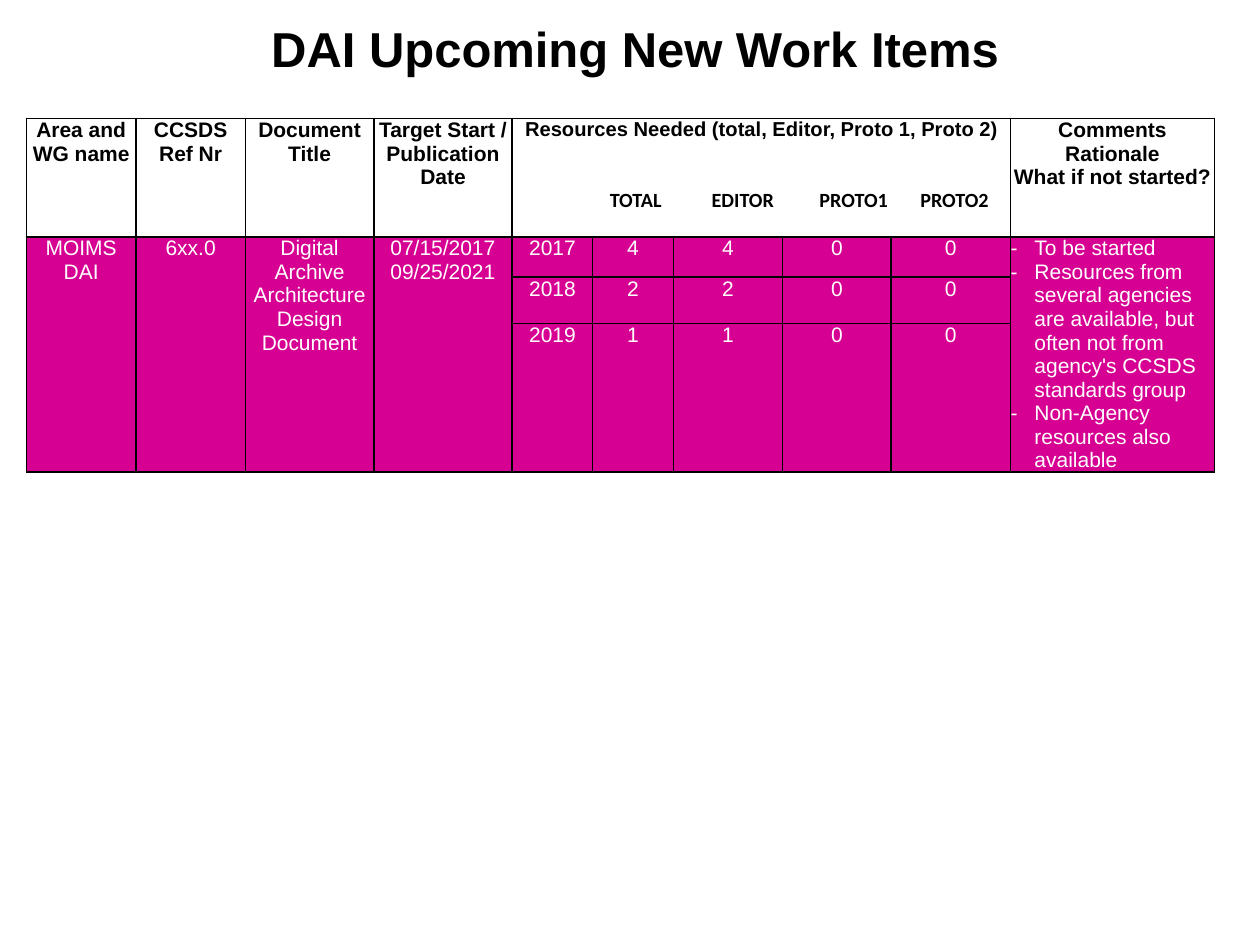
from pptx import Presentation
from pptx.dml.color import RGBColor
from pptx.enum.text import MSO_ANCHOR, PP_ALIGN
from pptx.oxml.ns import qn
from pptx.util import Emu, Inches, Pt
from lxml import etree

LEFT, MID = PP_ALIGN.LEFT, PP_ALIGN.CENTER
TOP = MSO_ANCHOR.TOP
HEX = {"ink": "000000", "pink": "D60093", "pale": "FFFFFF"}

# Table grid, in hundredths of an inch; the last row grows with its text
COLS = [87, 87, 102, 110, 64, 64, 87, 86, 95, 162]
ROWS = [94, 32, 37, 30]
YEAR, NOTE = 4, 9  # first resource column, comments column

HEADS = {
    0: "Area and WG name",
    1: "CCSDS Ref Nr",
    2: "Document Title",
    3: "Target Start / Publication Date",
    NOTE: "Comments\nRationale\nWhat if not started?",
}
ITEM = ["MOIMS DAI", "6xx.0", "Digital Archive Architecture Design Document",
        "07/15/2017\n09/25/2021"]
NEEDS = [(2017, 4, 4, 0, 0), (2018, 2, 2, 0, 0), (2019, 1, 1, 0, 0)]
NOTES = [
    "To be started",
    "Resources from several agencies are available, but often not from "
    "agency's CCSDS standards group",
    "Non-Agency resources also available",
]
# Resource labels and their tab stops in inches
TABS = {"TOTAL": 0.98, "EDITOR": 1.83, "PROTO1": 2.71, "PROTO2": 3.51}


def color(name):
    return RGBColor.from_string(HEX[name])


def style(para, text, size=12, ink="ink", bold=False, align=MID, face="Arial"):
    para.text = text
    para.alignment = align
    font = para.font
    font.name, font.size, font.bold = face, Pt(size), bold
    font.color.rgb = color(ink)


def indent(para, left, first=0):
    props = para._p.get_or_add_pPr()
    props.set("marL", str(Inches(left)))
    props.set("indent", str(Inches(first)))
    return props


def dress(cell, fill):
    """Set margins, fill and the four borders of a cell."""
    cell.margin_left = cell.margin_right = 0
    cell.margin_top = cell.margin_bottom = 0
    props = cell._tc.get_or_add_tcPr()
    for side in ("lnL", "lnR", "lnT", "lnB"):
        line = etree.SubElement(props, qn("a:" + side), w=str(Pt(1)))
        solid = etree.SubElement(line, qn("a:solidFill"))
        etree.SubElement(solid, qn("a:srgbClr"), val=HEX["ink"])
    if fill:
        cell.fill.solid()
        cell.fill.fore_color.rgb = color(fill)
    else:
        cell.fill.background()


def title(slide, box):
    left, top, width, high = box
    path = slide.shapes.build_freeform(0, 0)
    path.add_line_segments([(width, 0), (width, high), (0, high)])
    shape = path.convert_to_shape(left, top)
    shape.shadow.inherit = False
    shape.fill.background()
    shape.line.fill.background()
    frame = shape.text_frame
    frame.word_wrap = True
    frame.vertical_anchor = TOP
    frame.margin_left = frame.margin_right = Inches(0.06)
    frame.margin_top = frame.margin_bottom = Inches(0.06)
    para = frame.paragraphs[0]
    indent(para, 0.5)
    style(para, "DAI Upcoming New Work Items", 28, bold=True)
    para.line_spacing = 0.9


def labels(cell):
    """Resource heading with its tabbed column labels below."""
    frame = cell.text_frame
    style(frame.paragraphs[0],
          "Resources Needed (total, Editor, Proto 1, Proto 2)", 11.5, bold=True)
    para = frame.add_paragraph()
    stops = etree.SubElement(para._p.get_or_add_pPr(), qn("a:tabLst"))
    for stop in TABS.values():
        etree.SubElement(stops, qn("a:tab"), pos=str(Inches(stop)), algn="ctr")
    style(para, "".join("\t" + name for name in TABS), 11.5, bold=True,
          align=LEFT, face="Calibri")
    para.space_before = Pt(27)


def remarks(cell):
    frame = cell.text_frame
    for i, note in enumerate(NOTES):
        para = frame.add_paragraph() if i else frame.paragraphs[0]
        props = indent(para, 0.19, -0.19)
        etree.SubElement(props, qn("a:buFont"), typeface="Arial")
        etree.SubElement(props, qn("a:buChar"), char="-")
        style(para, note, ink="pale", align=LEFT)


def items(slide, box):
    left, top, width, high = box
    holder = slide.shapes.add_table(len(ROWS), len(COLS), *box)
    table = holder.table
    table.first_row = table.horz_banding = False
    for col, part in zip(table.columns, COLS):
        col.width = Emu(width * part // sum(COLS))
    for row, part in zip(table.rows, ROWS):
        row.height = Inches(part / 100)
    holder.height = high
    for r in range(len(ROWS)):
        for c in range(len(COLS)):
            dress(table.cell(r, c), "pink" if r else None)

    # Merged areas
    table.cell(0, YEAR).merge(table.cell(0, NOTE - 1))
    for c in (*range(YEAR), NOTE):
        table.cell(1, c).merge(table.cell(len(ROWS) - 1, c))

    # Header row
    for c, text in HEADS.items():
        style(table.cell(0, c).text_frame.paragraphs[0], text, bold=True)
    labels(table.cell(0, YEAR))

    # Work item with its yearly resources
    cells = {(1, c): text for c, text in enumerate(ITEM)}
    for r, need in enumerate(NEEDS, 1):
        cells.update({(r, c): str(n) for c, n in enumerate(need, YEAR)})
    for (r, c), text in cells.items():
        style(table.cell(r, c).text_frame.paragraphs[0], text, ink="pale")
    remarks(table.cell(1, NOTE))


def main():
    deck = Presentation()
    deck.slide_width, deck.slide_height = Inches(10), Inches(7.5)
    slide = deck.slides.add_slide(deck.slide_layouts[6])
    title(slide, [Inches(n) for n in (0.63, 0.14, 8.32, 0.58)])
    items(slide, [Inches(n) for n in (0.21, 0.94, 9.43, 2.95)])
    deck.save("out.pptx")


if __name__ == "__main__":
    main()
